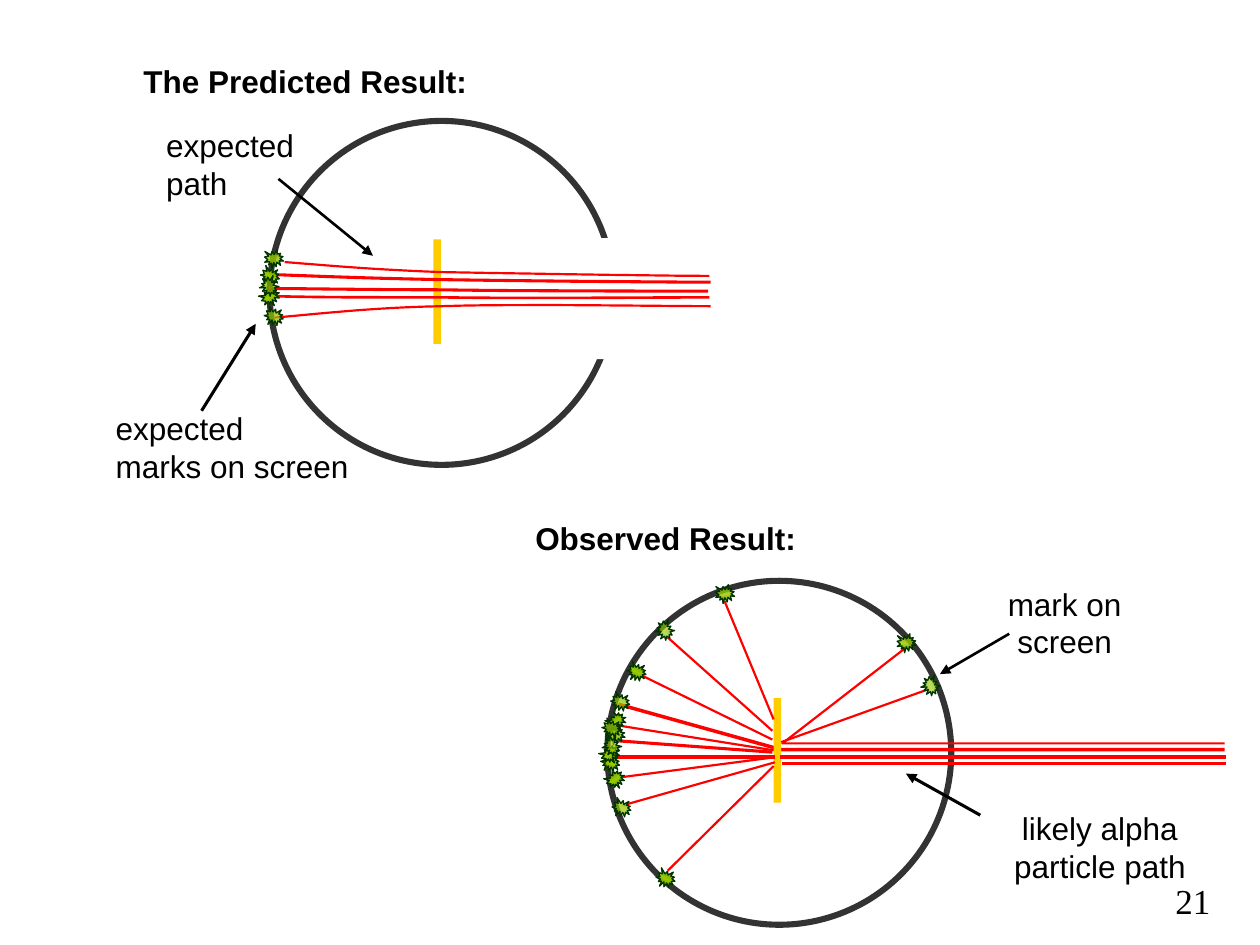
from copy import deepcopy
from dataclasses import dataclass
from itertools import cycle

from lxml.etree import SubElement
from pptx import Presentation
from pptx.dml.color import RGBColor
from pptx.enum.shapes import MSO_CONNECTOR, MSO_SHAPE
from pptx.enum.text import MSO_AUTO_SIZE, PP_ALIGN
from pptx.oxml.ns import qn
from pptx.util import Inches, Pt

BLACK = RGBColor(0x00, 0x00, 0x00)
WHITE = RGBColor(0xFF, 0xFF, 0xFF)
RED = RGBColor(0xFF, 0x00, 0x00)
GOLD = RGBColor(0xFF, 0xCC, 0x00)
SCREEN_GRAY = RGBColor(0x33, 0x33, 0x33)
MARK_EDGE = RGBColor(0x00, 0x33, 0x00)
LIME = RGBColor(0x99, 0xCC, 0x00)
OLIVE = RGBColor(0x6D, 0x92, 0x00)
DARK_OLIVE = RGBColor(0x47, 0x5E, 0x00)

SCREEN_SIZE = 2.73
FOIL_WIDTH, FOIL_HEIGHT = 0.06, 0.83
MARK_SIZE = 0.15
CURVE_STEPS = 12

Point = tuple[float, float]


@dataclass(frozen=True)
class Line:
    start: Point
    end: Point
    width: float = 1.25


@dataclass(frozen=True)
class Path:
    points: tuple[Point, ...]
    width: float = 1.25


@dataclass(frozen=True)
class MarkStyle:
    rotation: float
    outer: RGBColor
    opacity: int


@dataclass(frozen=True)
class Label:
    left: float
    top: float
    width: float
    height: float
    text: str
    bold: bool = False
    alignment: PP_ALIGN = PP_ALIGN.LEFT
    font: str = "Arial"
    size: float = 18


MARK_STYLES = (
    MarkStyle(0, OLIVE, 80),
    MarkStyle(28.9, DARK_OLIVE, 100),
    MarkStyle(323.4, DARK_OLIVE, 100),
    MarkStyle(27.1, OLIVE, 69),
    MarkStyle(70.7, OLIVE, 62),
)
PREDICTED_CURVES = (
    Path(((5.63, 2.19), (5.28, 2.19), (4.07, 2.17), (3.51, 2.16), (2.94, 2.14), (2.52, 2.1), (2.26, 2.08))),
    Path(((5.64, 2.24), (5.28, 2.24), (4.09, 2.23), (3.51, 2.22), (2.93, 2.21), (2.45, 2.19), (2.17, 2.18)), 1.75),
    Path(((5.62, 2.31), (5.27, 2.31), (4.09, 2.31), (3.51, 2.3), (2.93, 2.3), (2.41, 2.29), (2.12, 2.29)), 1.75),
    Path(((5.63, 2.36), (5.28, 2.36), (4.08, 2.37), (3.5, 2.36), (2.92, 2.36), (2.44, 2.36), (2.16, 2.35)), 1.5),
    Path(((5.64, 2.43), (5.28, 2.43), (4.08, 2.41), (3.51, 2.43), (2.93, 2.44), (2.45, 2.5), (2.18, 2.52))),
)
PREDICTED_MARKS = ((2.1, 1.98), (2.07, 2.12), (2.07, 2.28), (2.1, 2.44), (2.06, 2.2))
OBSERVED_MARKS = (
    (5.68, 4.64), (4.98, 5.26), (4.82, 5.65), (4.85, 5.5), (5.2, 4.93),
    (7.12, 5.03), (5.21, 6.9), (4.81, 6.11), (4.86, 6.34), (7.31, 5.37),
    (4.81, 5.76), (4.77, 5.98), (4.77, 5.91), (4.78, 5.71), (4.78, 5.85),
)
DEFLECTED_BEAM = Path(((9.72, 5.95), (6.2, 5.95), (4.91, 5.59)), 2)
REFLECTED_BEAM = Path(((9.72, 5.9), (6.21, 5.9), (7.19, 5.14)))
MIDDLE_RAY = Line((6.14, 5.95), (4.92, 5.76))
OBSERVED_RAYS = (
    Line((6.13, 5.87), (5.05, 5.34)),
    Line((6.13, 5.8), (5.3, 5.06)),
    Line((6.14, 5.71), (5.75, 4.77)),
    Line((6.13, 5.97), (4.91, 5.88), 1.75),
    Line((6.15, 6.01), (4.92, 6.17)),
    Line((6.15, 6.05), (4.95, 6.39)),
    Line((6.14, 6.08), (5.3, 6.91)),
    Line((9.73, 6.01), (6.19, 6.01), 2),
    Line((9.73, 6.06), (6.21, 6.06), 1.5),
    Line((6.2, 5.89), (7.37, 5.47)),
    Line((6.15, 6.01), (4.89, 6.01), 2),
)
POINTERS = (
    Line((2.21, 1.42), (2.96, 2.03), 1.5),
    Line((1.6, 3.26), (2.03, 2.57), 1.75),
    Line((8.01, 5.03), (7.46, 5.35), 1.5),
    Line((7.78, 6.47), (7.19, 6.14), 1.75),
)
LABELS = (
    Label(1.04, 0.44, 2.77, 0.4, "The Predicted Result:", bold=True),
    Label(1.22, 0.95, 1.28, 0.7, "expected\npath"),
    Label(0.82, 3.2, 2.05, 0.7, "expected\nmarks on screen"),
    Label(4.15, 4.07, 2.27, 0.4, "Observed Result:", bold=True),
    Label(7.9, 4.59, 1.1, 0.7, "mark on\nscreen", alignment=PP_ALIGN.CENTER),
    Label(7.95, 6.37, 1.56, 0.7, "likely alpha\nparticle path", alignment=PP_ALIGN.CENTER),
    Label(9.23, 6.93, 0.48, 0.43, "21", font="Times New Roman", size=20),
)


def add_block(slide, kind: MSO_SHAPE, left: float, top: float, width: float, height: float):
    shape = slide.shapes.add_shape(kind, Inches(left), Inches(top), Inches(width), Inches(height))
    shape.shadow.inherit = False
    return shape


def add_filled(slide, left: float, top: float, width: float, height: float, color: RGBColor):
    shape = add_block(slide, MSO_SHAPE.RECTANGLE, left, top, width, height)
    shape.fill.solid()
    shape.fill.fore_color.rgb = color
    shape.line.fill.background()
    return shape


def style_line(shape, color: RGBColor, width: float) -> None:
    shape.line.color.rgb = color
    shape.line.width = Pt(width)


def add_screen(slide, left: float, top: float) -> None:
    shape = add_block(slide, MSO_SHAPE.OVAL, left, top, SCREEN_SIZE, SCREEN_SIZE)
    shape.fill.background()
    style_line(shape, SCREEN_GRAY, 3.5)


def add_line(slide, line: Line, color: RGBColor, arrow: bool = False):
    ends = [Inches(value) for value in (*line.start, *line.end)]
    connector = slide.shapes.add_connector(MSO_CONNECTOR.STRAIGHT, *ends)
    style_line(connector, color, line.width)
    if arrow:
        SubElement(connector.line._get_or_add_ln(), qn("a:tailEnd"), type="triangle")
    SubElement(connector._element.spPr, qn("a:effectLst"))
    return connector


def add_path(slide, path: Path) -> None:
    start, *rest = [(Inches(x), Inches(y)) for x, y in path.points]
    builder = slide.shapes.build_freeform(*start)
    builder.add_line_segments(rest, close=False)
    shape = builder.convert_to_shape()
    shape.shadow.inherit = False
    shape.fill.background()
    style_line(shape, RED, path.width)


def flatten_curve(curve: Path) -> Path:
    points = [curve.points[0]]
    for first in range(0, len(curve.points) - 1, 3):
        controls = curve.points[first:first + 4]
        for step in range(1, CURVE_STEPS + 1):
            t = step / CURVE_STEPS
            weights = ((1 - t) ** 3, 3 * t * (1 - t) ** 2, 3 * t * t * (1 - t), t ** 3)
            points.append(tuple(sum(w * p[axis] for w, p in zip(weights, controls)) for axis in (0, 1)))
    return Path(tuple(points), curve.width)


def add_mark(slide, position: Point, style: MarkStyle) -> None:
    shape = add_block(slide, MSO_SHAPE.EXPLOSION1, *position, MARK_SIZE, MARK_SIZE)
    shape.rotation = style.rotation
    shape.fill.gradient()
    shape.fill.gradient_angle = 90
    stop_list = shape._element.spPr.find(".//" + qn("a:gsLst"))
    stop_list.append(deepcopy(stop_list[0]))
    for stop, position, color in zip(shape.fill.gradient_stops, (0, 0.5, 1), (style.outer, LIME, style.outer)):
        stop.position = position
        stop.color.rgb = color
    if style.opacity < 100:
        SubElement(stop_list[1][0], qn("a:alpha"), val=str(style.opacity * 1000))
    style_line(shape, MARK_EDGE, 0.75)


def add_marks(slide, positions: tuple[Point, ...]) -> None:
    for position, style in zip(positions, cycle(MARK_STYLES)):
        add_mark(slide, position, style)


def add_label(slide, label: Label) -> None:
    box = slide.shapes.add_textbox(*map(Inches, (label.left, label.top, label.width, label.height)))
    text_frame = box.text_frame
    text_frame.word_wrap = False
    text_frame.auto_size = MSO_AUTO_SIZE.SHAPE_TO_FIT_TEXT
    text_frame.text = label.text
    for paragraph in text_frame.paragraphs:
        paragraph.alignment = label.alignment
        font = paragraph.runs[0].font
        font.name, font.size, font.bold = label.font, Pt(label.size), label.bold
        font.color.rgb = BLACK


def draw_predicted(slide) -> None:
    add_screen(slide, 2.14, 0.96)
    add_filled(slide, 4.69, 1.89, 0.21, 0.96, WHITE)
    add_filled(slide, 3.44, 1.9, FOIL_WIDTH, FOIL_HEIGHT, GOLD)
    for curve in PREDICTED_CURVES:
        add_path(slide, flatten_curve(curve))
    add_marks(slide, PREDICTED_MARKS)


def draw_observed(slide) -> None:
    add_screen(slide, 4.82, 4.61)
    add_path(slide, DEFLECTED_BEAM)
    foil = add_filled(slide, 6.14, 5.54, FOIL_WIDTH, FOIL_HEIGHT, GOLD)
    add_line(slide, MIDDLE_RAY, RED).begin_connect(foil, 1)
    for ray in OBSERVED_RAYS:
        add_line(slide, ray, RED)
    add_path(slide, REFLECTED_BEAM)
    add_marks(slide, OBSERVED_MARKS)


def main() -> None:
    """Build the slide comparing predicted and observed alpha particle paths."""
    presentation = Presentation()
    presentation.slide_width, presentation.slide_height = Inches(10), Inches(7.5)
    slide = presentation.slides.add_slide(presentation.slide_layouts[6])
    draw_predicted(slide)
    draw_observed(slide)
    for pointer in POINTERS:
        add_line(slide, pointer, BLACK, arrow=True)
    for label in LABELS:
        add_label(slide, label)
    presentation.save("out.pptx")


if __name__ == "__main__":
    main()
